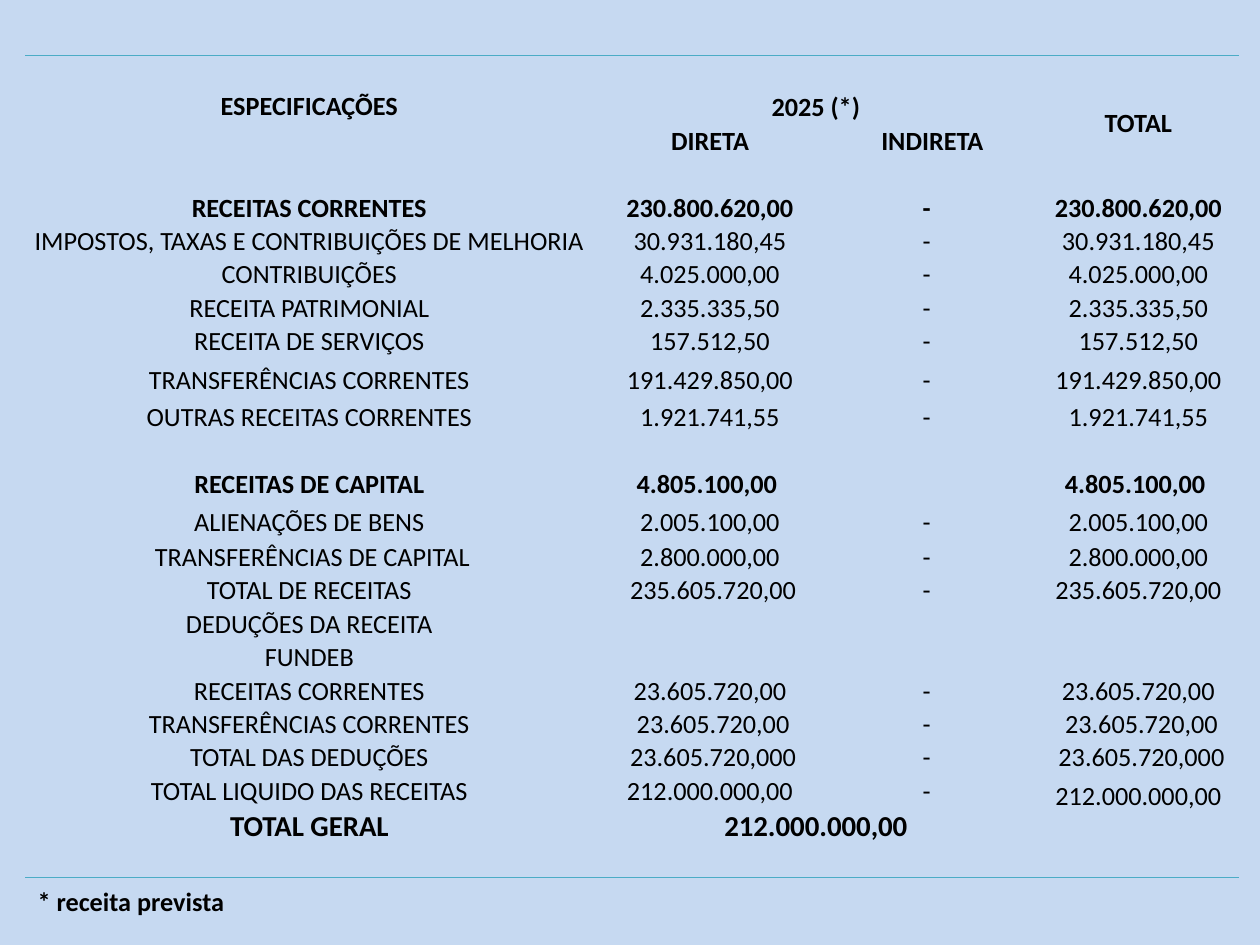
from lxml.etree import SubElement
from pptx import Presentation
from pptx.dml.color import RGBColor
from pptx.enum.text import MSO_ANCHOR, PP_ALIGN
from pptx.oxml.ns import qn
from pptx.util import Inches, Pt

INK, LINE, BACK = "000000", "4BACC6", "C6D9F1"
BOLD = {"name": "Calibri", "size": Pt(15), "bold": True}
PLAIN = BOLD | {"bold": False}
GRAND = BOLD | {"size": Pt(16.5)}


def style(font, form):
    for key, val in form.items():
        setattr(font, key, val)
    font.color.rgb = RGBColor.from_string(INK)


def edge(cell, side):
    """Draw one border of a cell; side is lnT or lnB."""
    line = SubElement(cell._tc.get_or_add_tcPr(), qn("a:" + side), w=str(Pt(1)))
    fill = SubElement(line, qn("a:solidFill"))
    SubElement(fill, qn("a:srgbClr"), val=LINE)


deck = Presentation()
deck.slide_width, deck.slide_height = Inches(10), Inches(7.5)
slide = deck.slides.add_slide(deck.slide_layouts[6])
slide.background.fill.solid()
slide.background.fill.fore_color.rgb = RGBColor.from_string(BACK)

# Label, direct, indirect, total
rows = [
    ("ESPECIFICAÇÕES", "", "", ""),
    ("", "2025 (*)", "", "TOTAL"),
    ("", "DIRETA", "INDIRETA", ""),
    ("", "", "", ""),
    ("RECEITAS CORRENTES", "230.800.620,00", "-", "230.800.620,00"),
    ("IMPOSTOS, TAXAS E CONTRIBUIÇÕES DE MELHORIA", "30.931.180,45", "-", "30.931.180,45"),
    ("CONTRIBUIÇÕES", "4.025.000,00", "-", "4.025.000,00"),
    ("RECEITA PATRIMONIAL", "2.335.335,50", "-", "2.335.335,50"),
    ("RECEITA DE SERVIÇOS", "157.512,50", "-", "157.512,50"),
    ("TRANSFERÊNCIAS CORRENTES", "191.429.850,00", "-", "191.429.850,00"),
    ("OUTRAS RECEITAS CORRENTES", "1.921.741,55", "-", "1.921.741,55"),
    ("", "", "", ""),
    ("RECEITAS DE CAPITAL", "4.805.100,00", "", "4.805.100,00"),
    ("ALIENAÇÕES DE BENS", "2.005.100,00", "-", "2.005.100,00"),
    ("TRANSFERÊNCIAS DE CAPITAL", "2.800.000,00", "-", "2.800.000,00"),
    ("TOTAL DE RECEITAS", "235.605.720,00", "-", "235.605.720,00"),
    ("DEDUÇÕES DA RECEITA", "", "", ""),
    ("FUNDEB", "", "", ""),
    ("RECEITAS CORRENTES", "23.605.720,00", "-", "23.605.720,00"),
    ("TRANSFERÊNCIAS CORRENTES", "23.605.720,00", "-", "23.605.720,00"),
    ("TOTAL DAS DEDUÇÕES", "23.605.720,000", "-", "23.605.720,000"),
    ("TOTAL LIQUIDO DAS RECEITAS", "212.000.000,00", "-", "212.000.000,00"),
    ("TOTAL GERAL", "212.000.000,00", "", ""),
    ("", "", "", ""),
]
last = len(rows) - 1
forms = dict.fromkeys((0, 1, 2, 4, 12), BOLD) | {last - 1: GRAND}
tall = {0: 0.27, 1: 0.27, 2: 0.27, 9: 0.31, 10: 0.29, 13: 0.3, 14: 0.28}
middle = {(0, 0), (1, 3)}
# Cells set slightly off centre: (row, column) -> margins in inches
nudge = dict.fromkeys([(14, 0), (15, 1), (19, 1), (19, 3), (20, 1), (20, 3)],
                      {"margin_left": 0.06})
nudge |= dict.fromkeys([(12, 1), (12, 3)], {"margin_right": 0.06})
nudge[21, 3] = {"margin_bottom": 0.25}
pads = {"margin_left": 0.01, "margin_right": 0.01, "margin_top": 0.01, "margin_bottom": 0}

frame = slide.shapes.add_table(len(rows), 4, Inches(0.2), Inches(0.44),
                               Inches(9.63), Inches(6.48))
grid = frame.table
grid.first_row = grid.horz_banding = False
# Built-in "No Style, No Grid"
grid._tbl.tblPr.find(qn("a:tableStyleId")).text = "{2D5ABB26-0587-4C30-8999-92F81FD0307C}"
for col, wide in zip(grid.columns, (4.51, 1.85, 1.68, 1.59)):
    col.width = Inches(wide)

for r, row in enumerate(rows):
    grid.rows[r].height = Inches(tall.get(r, 0.26))
    for c, text in enumerate(row):
        cell = grid.cell(r, c)
        cell.vertical_anchor = MSO_ANCHOR.MIDDLE if (r, c) in middle else MSO_ANCHOR.BOTTOM
        shift = {"margin_right": 0.1} if text == "-" else nudge.get((r, c), {})
        for key, val in (pads | shift).items():
            setattr(cell, key, Inches(val))
        if r == 0:
            edge(cell, "lnT")
        if r == last:
            edge(cell, "lnB")
        cell.fill.background()
        para = cell.text_frame.paragraphs[0]
        para.alignment = PP_ALIGN.CENTER
        if text:
            run = para.add_run()
            run.text = text
            style(run.font, forms.get(r, PLAIN))
        else:
            SubElement(para._p, qn("a:endParaRPr"), sz="1500")

for top, left, low, right in ((0, 0, 2, 0), (0, 1, 0, 3), (1, 1, 1, 2), (1, 3, 2, 3),
                              (21, 3, 22, 3), (22, 1, 22, 2), (last, 0, last, 3)):
    grid.cell(top, left).merge(grid.cell(low, right))

note = slide.shapes.add_textbox(Inches(0.2), Inches(6.98), Inches(1.7), Inches(0.35))
note.text_frame.word_wrap = False
run = note.text_frame.paragraphs[0].add_run()
run.text = "* receita prevista"
style(run.font, BOLD)

deck.save("out.pptx")
